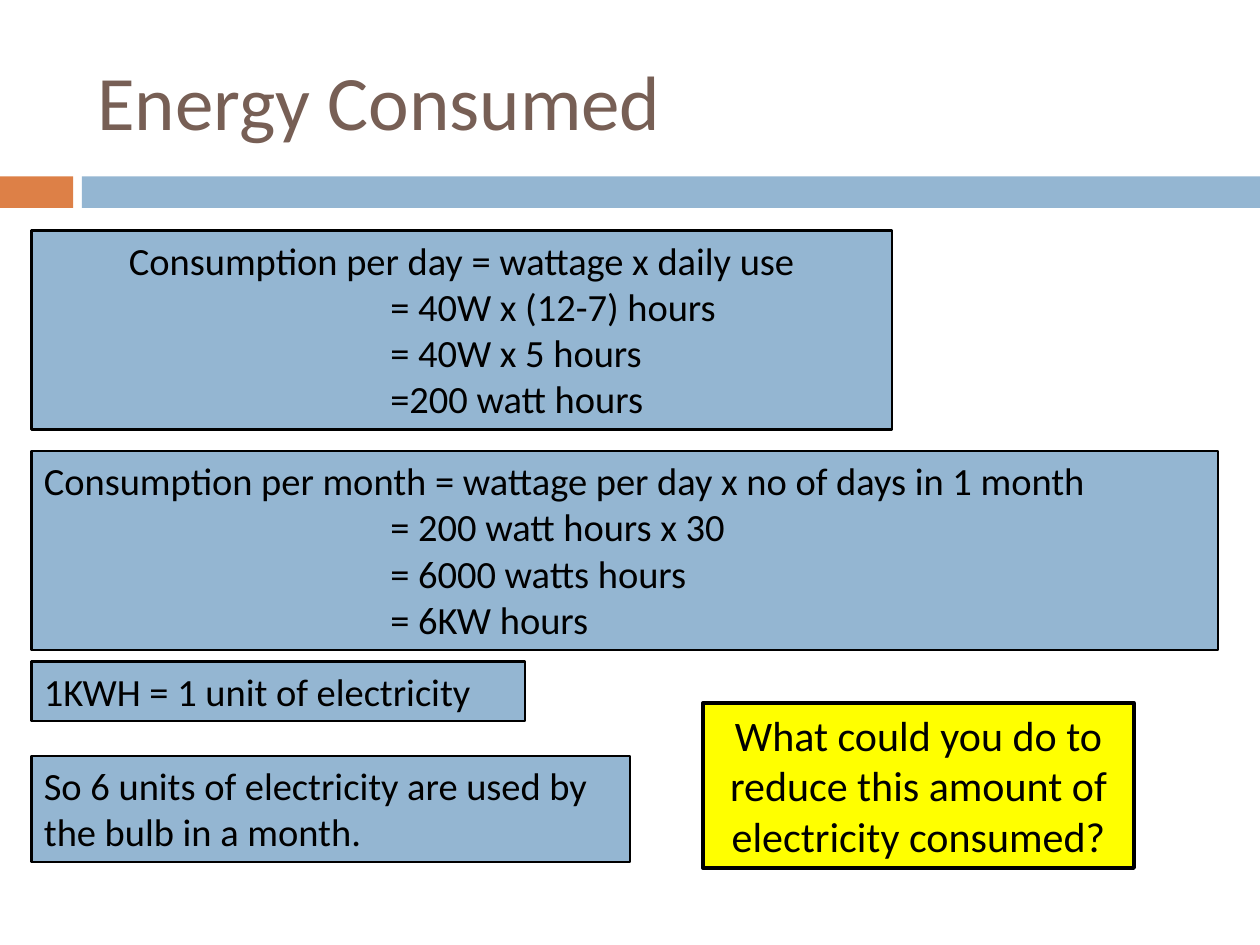
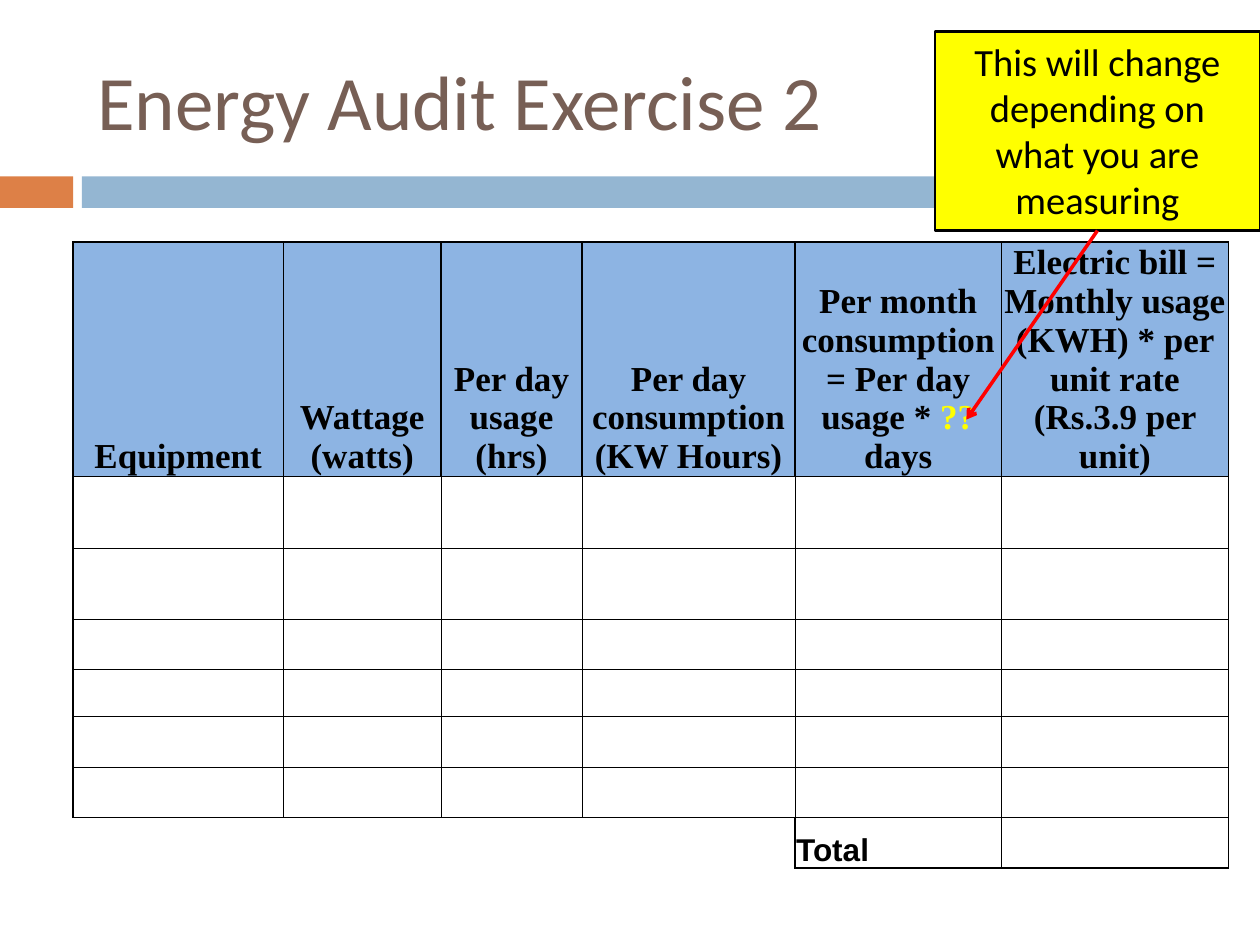
from lxml import etree
from pptx import Presentation
from pptx.dml.color import RGBColor
from pptx.enum.shapes import MSO_CONNECTOR, MSO_SHAPE
from pptx.enum.text import MSO_ANCHOR, MSO_AUTO_SIZE, PP_ALIGN
from pptx.oxml.ns import qn
from pptx.util import Inches, Pt

# Shared look
BLACK, BROWN, ORANGE, BLUE = "000000", "775F55", "DD8047", "94B6D2"
YELLOW, RED, HEADER_BLUE = "FFFF00", "FF0000", "8DB4E3"
BODY_FONT, TABLE_FONT = "Calibri", "Times New Roman"
EQUATION_INDENT = 2.75

# Audit table
COLUMN_WIDTHS = [1.67, 1.25, 1.12, 1.69, 1.64, 1.8]
ROW_HEIGHTS = [1.86, 0.57, 0.57, 0.39, 0.38, 0.4, 0.4, 0.4]
HEADINGS = [
    ["Equipment"],
    ["Wattage (watts)"],
    ["Per day usage (hrs)"],
    ["Per day consumption (KW Hours)"],
    ["Per month consumption = Per day usage * ", "?? ", "days"],
    ["Electric bill = Monthly usage (KWH) * per unit rate (Rs.3.9 per unit)"],
]
TOTAL_ROW, TOTAL_COLUMN = len(ROW_HEIGHTS) - 1, 4
THICK, THIN = 1, 0.5


def color(hex_code):
    return RGBColor.from_string(hex_code)


def set_font(font, size, name=BODY_FONT, hex_code=BLACK, bold=False):
    font.size, font.name, font.bold = Pt(size), name, bold
    font.color.rgb = color(hex_code)


def add_rectangle(slide, box, fill, line_width=None):
    shape = slide.shapes.add_shape(MSO_SHAPE.RECTANGLE, *map(Inches, box))
    shape.shadow.inherit = False
    shape.fill.solid()
    shape.fill.fore_color.rgb = color(fill)
    if line_width is None:
        shape.line.fill.background()
    else:
        shape.line.color.rgb = color(BLACK)
        shape.line.width = Pt(line_width)
    return shape


def add_text_panel(slide, box, lines, fill=BLUE, size=22, line_width=1.25,
                   alignment=PP_ALIGN.LEFT):
    """Outlined panel; lines after the first align under the equals sign."""
    shape = add_rectangle(slide, box, fill, line_width)
    frame = shape.text_frame
    frame.word_wrap = True
    frame.auto_size = MSO_AUTO_SIZE.SHAPE_TO_FIT_TEXT
    frame.vertical_anchor = MSO_ANCHOR.TOP
    frame.text = "\n".join(lines)
    for index, paragraph in enumerate(frame.paragraphs):
        set_font(paragraph.font, size)
        paragraph.alignment = PP_ALIGN.LEFT if index else alignment
        if index:
            properties = paragraph._p.get_or_add_pPr()
            properties.set("marL", str(Inches(EQUATION_INDENT)))


def add_callout(slide, box, text, size, line_width):
    add_text_panel(slide, box, [text], YELLOW, size, line_width, PP_ALIGN.CENTER)


def add_titled_slide(presentation, title_text):
    slide = presentation.slides.add_slide(presentation.slide_layouts[5])
    # Two-colour band under the title
    add_rectangle(slide, (0, 1.4, 0.58, 0.25), ORANGE)
    add_rectangle(slide, (0.65, 1.4, 9.35, 0.25), BLUE)
    # Title
    title = slide.shapes.title
    title.left, title.top, title.width, title.height = map(
        Inches, (0.67, 0.25, 8.92, 1.08))
    frame = title.text_frame
    frame.text = title_text
    frame.auto_size = MSO_AUTO_SIZE.NONE
    frame.vertical_anchor = MSO_ANCHOR.MIDDLE
    frame.paragraphs[0].alignment = PP_ALIGN.LEFT
    set_font(frame.paragraphs[0].font, 44, hex_code=BROWN)
    return slide


def border_widths(row, column):
    """Thick frame and header, thin grid, open cells left of the total."""
    if row == TOTAL_ROW and column < TOTAL_COLUMN:
        return {"T": THICK, **({"R": THICK} if column == TOTAL_COLUMN - 1 else {})}
    boxed = row in (0, TOTAL_ROW)
    thick_sides = {
        "L": boxed or column == 0,
        "R": boxed or column == len(COLUMN_WIDTHS) - 1,
        "T": boxed or row == 1,
        "B": boxed or row == TOTAL_ROW - 1,
    }
    return {side: THICK if thick else THIN for side, thick in thick_sides.items()}


def set_borders(cell, widths):
    properties = cell._tc.get_or_add_tcPr()
    for side in "LRTB":
        line = etree.SubElement(properties, qn(f"a:ln{side}"))
        if side in widths:
            line.set("w", str(Pt(widths[side])))
            fill = etree.SubElement(line, qn("a:solidFill"))
            etree.SubElement(fill, qn("a:srgbClr"), val=BLACK)
        else:
            etree.SubElement(line, qn("a:noFill"))


def write_cell(cell, parts, size, font_name, alignment):
    paragraph = cell.text_frame.paragraphs[0]
    paragraph.alignment = alignment
    set_font(paragraph.font, size, font_name, bold=True)
    for part in parts:
        run = paragraph.add_run()
        run.text = part
        if part.startswith("??"):
            run.font.color.rgb = color(YELLOW)


def add_audit_table(slide, left, top):
    table = slide.shapes.add_table(
        len(ROW_HEIGHTS), len(COLUMN_WIDTHS), Inches(left), Inches(top),
        Inches(sum(COLUMN_WIDTHS)), Inches(sum(ROW_HEIGHTS))).table
    table.first_row = table.horz_banding = False
    for column, width in zip(table.columns, COLUMN_WIDTHS):
        column.width = Inches(width)
    for row, height in zip(table.rows, ROW_HEIGHTS):
        row.height = Inches(height)

    # Grid
    for row in range(len(ROW_HEIGHTS)):
        for column in range(len(COLUMN_WIDTHS)):
            cell = table.cell(row, column)
            cell.margin_left = cell.margin_right = cell.margin_top = Inches(0.01)
            cell.margin_bottom = 0
            cell.vertical_anchor = MSO_ANCHOR.BOTTOM
            set_borders(cell, border_widths(row, column))
            if row == 0:
                cell.fill.solid()
                cell.fill.fore_color.rgb = color(HEADER_BLUE)
            else:
                cell.fill.background()

    # Wording
    for column, parts in enumerate(HEADINGS):
        write_cell(table.cell(0, column), parts, 20, TABLE_FONT, PP_ALIGN.CENTER)
    write_cell(table.cell(TOTAL_ROW, TOTAL_COLUMN), ["Total"], 18, "Arial",
               PP_ALIGN.LEFT)


def add_arrow(slide, start, end):
    connector = slide.shapes.add_connector(
        MSO_CONNECTOR.STRAIGHT, *map(Inches, start + end))
    connector.line.color.rgb = color(RED)
    connector.line.width = Pt(2)
    etree.SubElement(connector.line._get_or_add_ln(), qn("a:tailEnd"), type="arrow")
    etree.SubElement(connector._element.spPr, qn("a:effectLst"))


def build_consumption_slide(presentation):
    slide = add_titled_slide(presentation, "Energy Consumed")
    left = 0.25
    add_text_panel(slide, (left, 1.83, 6.83, 1.58), [
        "Consumption per day = wattage x daily use",
        "= 40W x (12-7) hours",
        "= 40W x 5 hours",
        "=200 watt hours",
    ], alignment=PP_ALIGN.CENTER)
    add_text_panel(slide, (left, 3.58, 9.42, 1.58), [
        "Consumption per month = wattage per day x no of days in 1 month",
        "= 200 watt hours x 30",
        "= 6000 watts hours",
        "= 6KW hours",
    ])
    add_text_panel(slide, (left, 5.25, 3.92, 0.47), ["1KWH = 1 unit of electricity"])
    add_text_panel(slide, (left, 6, 4.75, 0.84),
                   ["So 6 units of electricity are used by the bulb in a month."])
    add_callout(slide, (5.58, 5.58, 3.42, 1.31),
                "What could you do to reduce this amount of electricity consumed?",
                24, 2)


def build_audit_slide(presentation):
    slide = add_titled_slide(presentation, "Energy Audit Exercise 2")
    add_audit_table(slide, 0.58, 1.92)
    # Note pointing at the number of days
    left, top, width, height = note_box = (7.42, 0.25, 2.58, 1.58)
    add_callout(slide, note_box,
                "This will change depending on what you are measuring", 22, 1.25)
    add_arrow(slide, (left + width / 2, top + height), (left + 0.25, 3.33))


def main():
    presentation = Presentation()
    presentation.slide_width, presentation.slide_height = Inches(10), Inches(7.5)
    build_consumption_slide(presentation)
    build_audit_slide(presentation)
    presentation.save("out.pptx")


if __name__ == "__main__":
    main()
